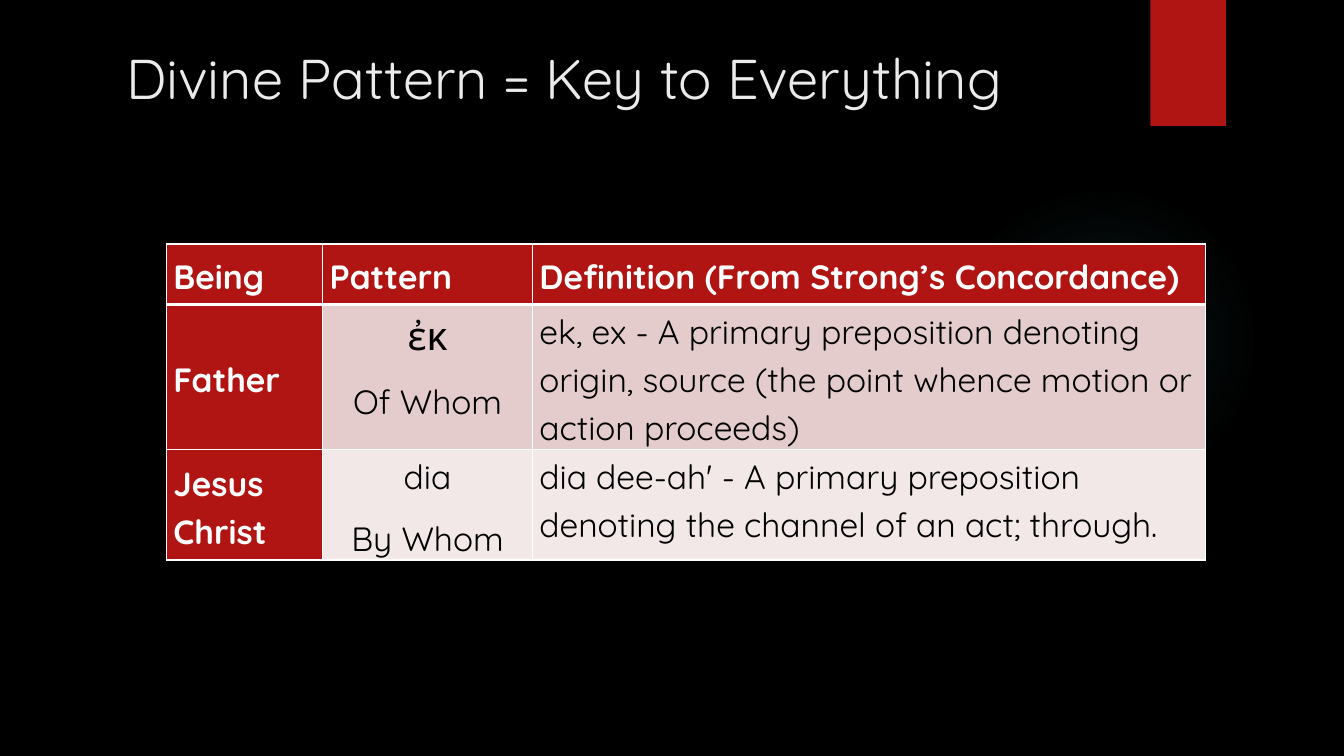
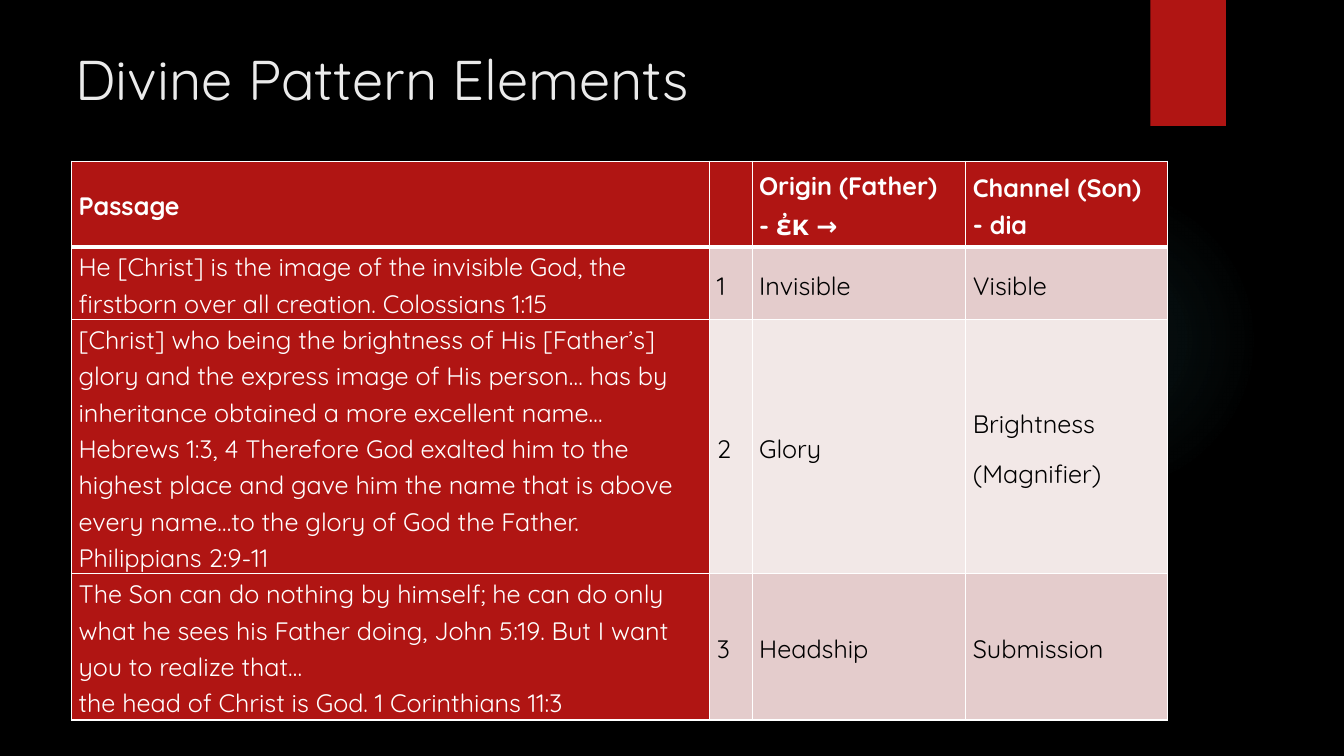
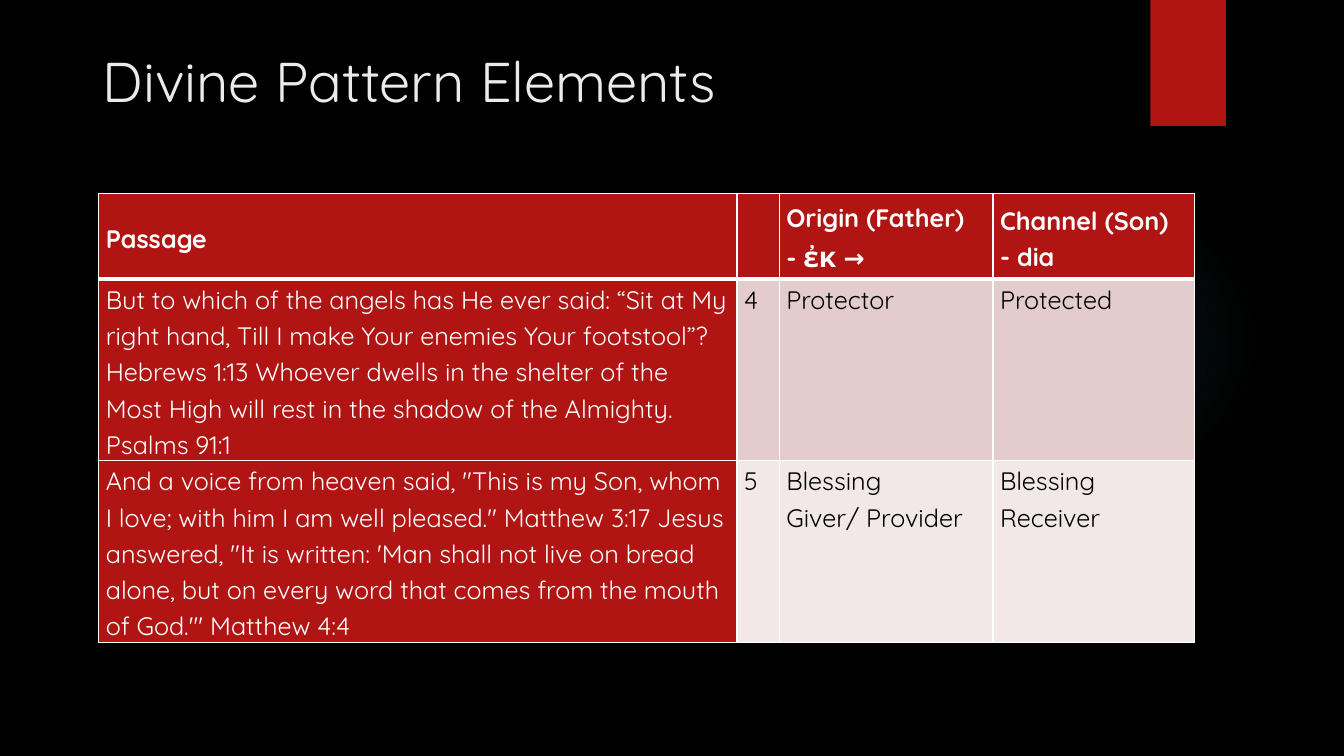
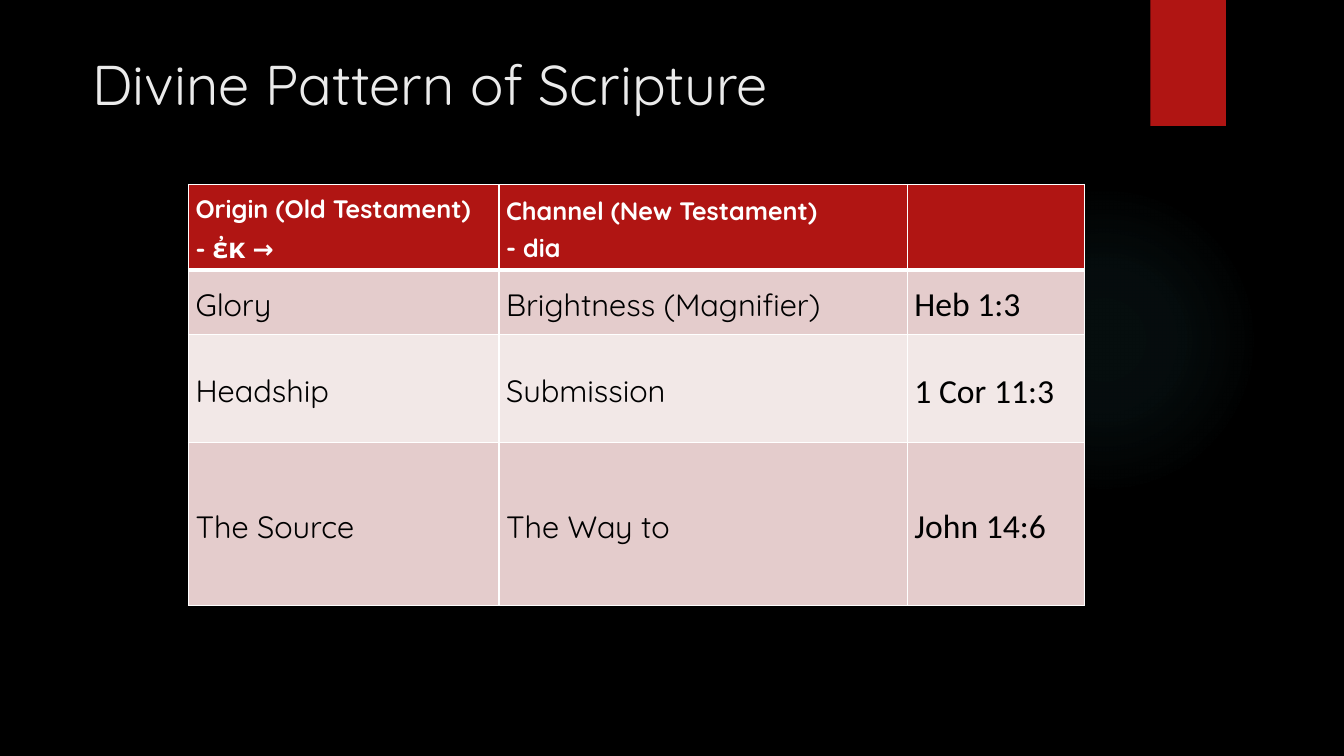
import collections
import dataclasses

import pptx
import pptx.dml.color
import pptx.enum.shapes
import pptx.enum.text
import pptx.oxml
import pptx.oxml.ns
import pptx.util

Inches = pptx.util.Inches
Pt = pptx.util.Pt
RGB = pptx.dml.color.RGBColor.from_string
ANCHOR = pptx.enum.text.MSO_ANCHOR
ALIGN = pptx.enum.text.PP_ALIGN
SHAPE = pptx.enum.shapes.MSO_SHAPE


@dataclasses.dataclass(frozen=True)
class Theme:
    background: str = "000000"
    accent: str = "B01513"
    glow: str = "50B9C1"
    title: str = "EBEBEB"
    light: str = "FFFFFF"
    dark: str = "000000"
    bands: tuple = ("E4CCCC", "F2E8E7")
    font: str = "Quicksand"
    reference_font: str = "Calibri"
    title_size: int = 40
    large: int = 24
    medium: int = 22
    small: int = 18
    greek_sizes: tuple = ((24, 28), (18, 20))
    grid: float = 1
    header_rule: float = 3


theme = Theme()
Column = collections.namedtuple(
    "Column", "width size anchor align font label bold",
    defaults=(ANCHOR.MIDDLE, ALIGN.LEFT, theme.font, False, False))
Page = collections.namedtuple("Page", "title title_at table_at header_size columns heights cells")


def add_text(p, text, size, color, bold=False, font=theme.font):
    before, greek, after = text.partition("ἐκ")
    for part in (before, greek, after):
        for i, line in enumerate(part.split("\n")):
            if i:
                p.add_line_break()
            if line:
                r = p.add_run()
                r.text = line
                r.font.name = font
                r.font.size = Pt(dict(theme.greek_sizes)[size] if part == greek else size)
                r.font.bold = bold
                r.font.color.rgb = RGB(color)


def set_borders(cell, widths):
    tcPr = cell._tc.get_or_add_tcPr()
    for i, (side, width) in enumerate(widths.items()):
        tcPr.insert(i, pptx.oxml.parse_xml(
            f'<a:ln{side} {pptx.oxml.ns.nsdecls("a")} w="{Pt(width)}"><a:solidFill>'
            f'<a:srgbClr val="{theme.light}"/></a:solidFill></a:ln{side}>'))


TOP = ANCHOR.TOP
ORIGIN = "Origin (Father) \n- ἐκ →"
CHANNEL = "Channel (Son) \n- dia"
passage = Column(6.33, theme.small, TOP, label=True)
passage_columns = [passage] + [Column(w, theme.small) for w in (0.42, 2.12, 2)]

pages = [
    Page(
        "Divine Pattern = Key to Everything", (1.15, 0.38), (1.65, 2.42), theme.large,
        [
            Column(1.55, theme.large, label=True, bold=True),
            Column(2.08, theme.large, TOP, ALIGN.CENTER),
            Column(6.68, theme.large, TOP),
        ],
        [0.6, 1.43, 1.09],
        [
            ["Being", "Pattern", "Definition (From Strong’s Concordance)"],
            ["Father", ["ἐκ", "Of Whom"],
             "ek, ex - A primary preposition denoting origin, source "
             "(the point whence motion or action proceeds)"],
            ["Jesus \nChrist", ["dia", "By Whom"],
             "dia dee-ah' - A primary preposition denoting the channel of an act; through."],
        ],
    ),
    Page(
        "Divine Pattern Elements", (0.65, 0.39), (0.71, 1.6), theme.small,
        passage_columns,
        [0.85, 0.72, 2.52, 1.45],
        [
            ["Passage", "", ORIGIN, CHANNEL],
            ["He [Christ] is the image of the invisible God, "
             "the firstborn over all creation. Colossians 1:15",
             "1", "Invisible", "Visible"],
            ["[Christ] who being the brightness of His [Father’s] glory and the express image "
             "of His person… has by inheritance obtained a more excellent name… "
             "Hebrews 1:3, 4 Therefore God exalted him to the highest place and gave him "
             "the name that is above every name…to the glory of God the Father. "
             "Philippians 2:9-11",
             "2", "Glory", ["Brightness", "(Magnifier)"]],
            ["The Son can do nothing by himself; he can do only what he sees his Father doing, "
             "John 5:19. But I want you to realize that…\n"
             "the head of Christ is God. 1 Corinthians 11:3",
             "3", "Headship", "Submission"],
        ],
    ),
    Page(
        "Divine Pattern Elements", (0.92, 0.41), (0.98, 1.92), theme.small,
        [column._replace(anchor=TOP) for column in passage_columns],
        [0.85, 1.8, 1.8],
        [
            ["Passage", "", ORIGIN, CHANNEL],
            ["But to which of the angels has He ever said: “Sit at My right hand, Till I make "
             "Your enemies Your footstool”? Hebrews 1:13 Whoever dwells in the shelter of the "
             "Most High will rest in the shadow of the Almighty. Psalms 91:1",
             "4", "Protector", "Protected"],
            ["And a voice from heaven said, \"This is my Son, whom I love; with him I am well "
             "pleased.\" Matthew 3:17 Jesus answered, \"It is written: 'Man shall not live on "
             "bread alone, but on every word that comes from the mouth of God.'\" Matthew 4:4",
             "5", "Blessing \nGiver/ Provider", "Blessing Receiver"],
        ],
    ),
    Page(
        "Divine Pattern of Scripture", (0.82, 0.44), (1.87, 1.83), theme.small,
        [
            Column(3.08, theme.medium),
            Column(4.05, theme.medium),
            Column(1.76, theme.large, font=theme.reference_font),
        ],
        [0.85, 0.64, 1.07, 1.62],
        [
            ["Origin (Old Testament) \n- ἐκ →", "Channel (New Testament) \n- dia", ""],
            ["Glory", "Brightness (Magnifier)", "Heb 1:3"],
            ["Headship", "Submission", "1 Cor 11:3"],
            ["The Source", "The Way to", "John 14:6"],
        ],
    ),
]

prs = pptx.Presentation()
prs.slide_width = Inches(13.33)
prs.slide_height = Inches(7.5)
layout = prs.slide_layouts[5]
layout.background.fill.solid()
layout.background.fill.fore_color.rgb = RGB(theme.background)

slides = [prs.slides.add_slide(layout) for page in pages]
shapes = slides[0].shapes
glow = shapes.add_shape(SHAPE.OVAL, Inches(9.41), Inches(1.83), Inches(3.08), Inches(3.08))
band = shapes.add_shape(SHAPE.RECTANGLE, Inches(11.41), 0, Inches(0.75), Inches(1.25))
for i, sp in enumerate((glow, band)):
    sp.shadow.inherit = False
    sp.line.fill.background()
    sp.fill.solid()
    sp.fill.fore_color.rgb = RGB(theme.accent)
    layout.shapes.element.insert(2 + i, sp.element)

stops = "".join(
    f'<a:gs pos="{pos}000"><a:srgbClr val="{theme.glow}"><a:alpha val="{alpha}000"/></a:srgbClr></a:gs>'
    for pos, alpha in ((0, 7), (36, 6), (69, 0)))
solid = glow.element.spPr.find(pptx.oxml.ns.qn("a:solidFill"))
solid.getparent().replace(solid, pptx.oxml.parse_xml(
    f'<a:gradFill {pptx.oxml.ns.nsdecls("a")}><a:gsLst>{stops}</a:gsLst><a:path path="circle">'
    '<a:fillToRect l="50000" t="50000" r="50000" b="50000"/></a:path></a:gradFill>'))

for s, page in zip(slides, pages):
    title = s.shapes.title
    title.left, title.top = (Inches(v) for v in page.title_at)
    title.width, title.height = Inches(10.98), Inches(1.15)
    tf = title.text_frame
    tf.word_wrap = True
    tf.auto_size = pptx.enum.text.MSO_AUTO_SIZE.NONE
    tf.vertical_anchor = TOP
    p = tf.paragraphs[0]
    p.alignment = ALIGN.LEFT
    add_text(p, page.title, theme.title_size, theme.title)

    left, top = page.table_at
    table = s.shapes.add_table(
        len(page.heights), len(page.columns), Inches(left), Inches(top),
        Inches(sum(c.width for c in page.columns)), Inches(sum(page.heights))).table
    table.horz_banding = False
    for grid_column, column in zip(table.columns, page.columns):
        grid_column.width = Inches(column.width)
    for row, height in zip(table.rows, page.heights):
        row.height = Inches(height)

    for i, texts in enumerate(page.cells):
        header = i == 0
        for j, (column, text) in enumerate(zip(page.columns, texts)):
            if header:
                column = Column(column.width, page.header_size, label=True, bold=True)
            cell = table.cell(i, j)
            cell.margin_left = cell.margin_right = Inches(0.07)
            cell.margin_top = cell.margin_bottom = 0
            cell.vertical_anchor = column.anchor
            cell.fill.solid()
            cell.fill.fore_color.rgb = RGB(theme.accent if column.label else theme.bands[(i - 1) % 2])
            set_borders(cell, {
                "L": theme.grid,
                "R": theme.grid,
                "T": theme.header_rule if i == 1 else theme.grid,
                "B": theme.header_rule if header else theme.grid,
            })
            tf = cell.text_frame
            for k, line in enumerate(text if isinstance(text, list) else [text]):
                p = tf.add_paragraph() if k else tf.paragraphs[0]
                p.alignment = column.align
                p.line_spacing = 1.15
                p.space_after = Pt(10)
                color = theme.light if column.label else theme.dark
                add_text(p, line, column.size, color, column.bold, column.font)

prs.save("out.pptx")
